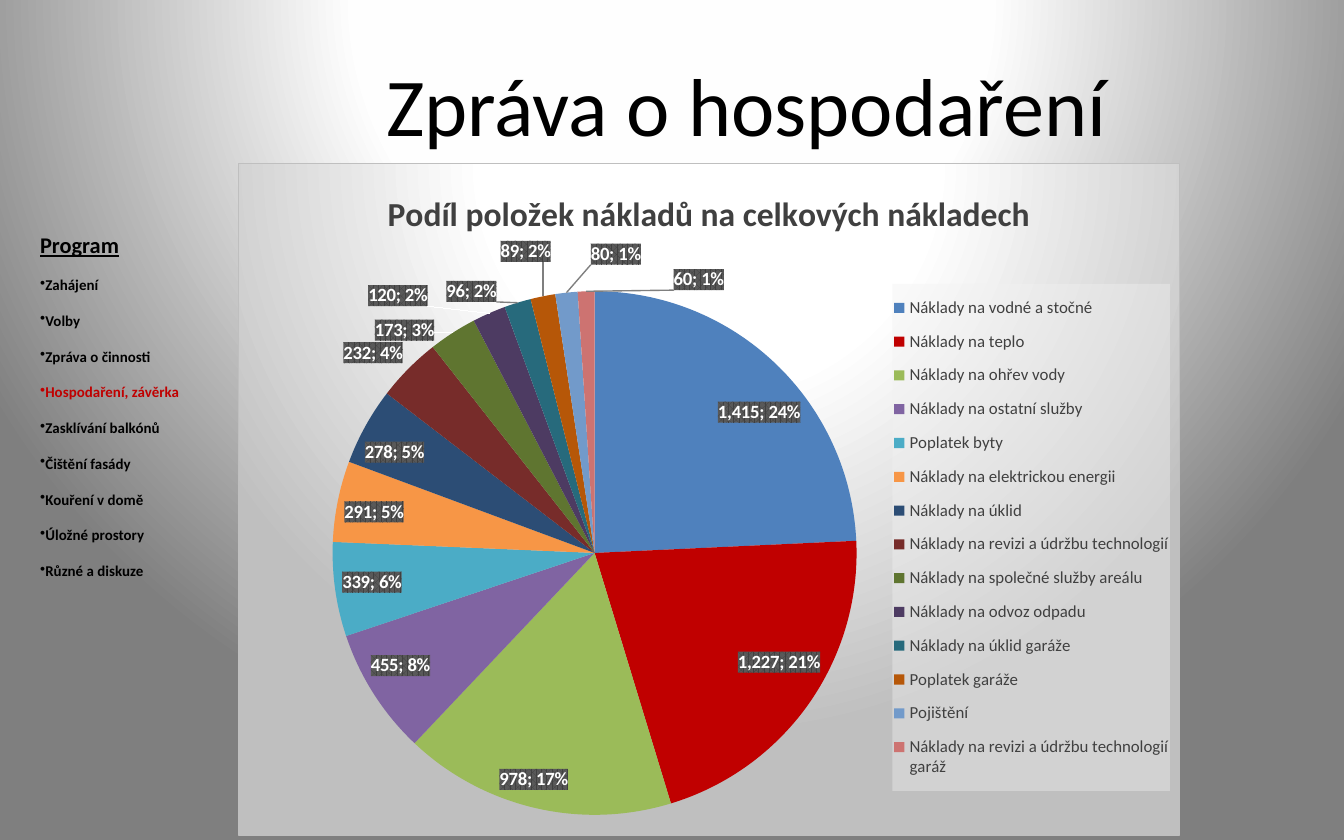
from dataclasses import dataclass
from typing import NamedTuple

from pptx import Presentation
from pptx.chart.data import CategoryChartData
from pptx.dml.color import RGBColor
from pptx.enum.chart import XL_CHART_TYPE, XL_LEGEND_POSITION
from pptx.enum.text import MSO_ANCHOR, PP_ALIGN
from pptx.oxml import parse_xml
from pptx.oxml.ns import nsdecls
from pptx.util import Inches, Pt

SLIDE_WIDTH, SLIDE_HEIGHT = 10, 6.25


@dataclass(frozen=True)
class Theme:
    font: str = "Calibri"
    text: str = "000000"
    accent: str = "C00000"
    chart_text: str = "404040"
    label_text: str = "FFFFFF"
    label_back: str = "595959"
    border: str = "BFBFBF"
    leader: str = "7F7F7F"
    legend_back: str = "F2F2F2"
    title_size: float = 44
    heading_size: float = 12
    item_size: float = 8
    chart_title_size: float = 18
    label_size: float = 10
    legend_size: float = 9


class Area(NamedTuple):
    """Left, top, width and height as shares of the containing object."""
    left: float
    top: float
    width: float
    height: float


class Cost(NamedTuple):
    name: str
    value: int
    color: str
    label_shift: tuple[float, float] | None = None


THEME = Theme()
TITLE_AREA = Area(0.161, 0.04, 0.789, 0.166)
AGENDA_AREA = Area(0.02, 0.235, 0.126, 0.469)
CHART_AREA = Area(0.177, 0.194, 0.701, 0.801)
PIE_AREA = Area(0.1, 0.19, 0.557, 0.78)
LEGEND_AREA = Area(0.695, 0.179, 0.295, 0.755)

AGENDA = ["Zahájení", "Volby", "Zpráva o činnosti", "Hospodaření, závěrka",
          "Zasklívání balkónů", "Čištění fasády", "Kouření v domě",
          "Úložné prostory", "Různé a diskuze"]
CURRENT_ITEM = "Hospodaření, závěrka"

COSTS = [
    Cost("Náklady na vodné a stočné", 1415, "4F81BD"),
    Cost("Náklady na teplo", 1227, "C00000"),
    Cost("Náklady na ohřev vody", 978, "9BBB59"),
    Cost("Náklady na ostatní služby", 455, "8064A2"),
    Cost("Poplatek byty", 339, "4BACC6"),
    Cost("Náklady na elektrickou energii", 291, "F79646"),
    Cost("Náklady na úklid", 278, "2C4D75"),
    Cost("Náklady na revizi a údržbu technologií", 232, "772C2A"),
    Cost("Náklady na společné služby areálu", 173, "5F7530"),
    Cost("Náklady na odvoz odpadu", 120, "4D3B62"),
    Cost("Náklady na úklid garáže", 96, "276A7C", (-0.02, 0.01)),
    Cost("Poplatek garáže", 89, "B65708", (0.01, -0.04)),
    Cost("Pojištění", 80, "729ACA", (0.08, -0.03)),
    Cost("Náklady na revizi a údržbu technologií garáž", 60, "CD7371", (0.12, 0.01)),
]


def place(area: Area) -> tuple:
    return (Inches(area.left * SLIDE_WIDTH), Inches(area.top * SLIDE_HEIGHT),
            Inches(area.width * SLIDE_WIDTH), Inches(area.height * SLIDE_HEIGHT))


def set_font(font, color: str, **values) -> None:
    for name, value in {"name": THEME.font, **values}.items():
        setattr(font, name, value)
    font.color.rgb = RGBColor.from_string(color)


def glow(stops: dict[int, str]) -> str:
    """Radial gradient whose centre lies above the top edge."""
    stop_xml = "".join(f'<a:gs pos="{share * 1000}"><a:srgbClr val="{color}"/></a:gs>'
                       for share, color in stops.items())
    return (f'<a:gradFill {nsdecls("a")} rotWithShape="1"><a:gsLst>{stop_xml}</a:gsLst>'
            '<a:path path="circle"><a:fillToRect l="50000" t="-80000" r="50000" '
            'b="180000"/></a:path></a:gradFill>')


def chart_xml(tag: str, body: str):
    return parse_xml(f'<c:{tag} {nsdecls("c", "a")}>{body}</c:{tag}>')


def set_layout(element, body: str) -> None:
    for old in element.xpath("./c:layout"):
        element.remove(old)
    layout = chart_xml("layout", f"<c:manualLayout>{body}</c:manualLayout>")
    overlay = element.xpath("./c:overlay")
    if overlay:
        overlay[0].addprevious(layout)
    else:
        element.insert(0, layout)


def edge_layout(area: Area, target: str = "") -> str:
    return (f'{target}<c:xMode val="edge"/><c:yMode val="edge"/>'
            f'<c:x val="{area.left}"/><c:y val="{area.top}"/>'
            f'<c:w val="{area.width}"/><c:h val="{area.height}"/>')


def label_format() -> str:
    """Number format stays linked to the data, so percentages keep their own."""
    shown = {"LegendKey": 0, "Val": 1, "CatName": 0, "SerName": 0,
             "Percent": 1, "BubbleSize": 0}
    flags = "".join(f'<c:show{name} val="{flag}"/>' for name, flag in shown.items())
    return ('<c:numFmt formatCode="#,##0" sourceLinked="1"/><c:spPr>'
            f'<a:pattFill prst="pct75"><a:fgClr><a:srgbClr val="{THEME.chart_text}"/></a:fgClr>'
            f'<a:bgClr><a:srgbClr val="{THEME.label_back}"/></a:bgClr></a:pattFill></c:spPr>'
            f'<c:txPr><a:bodyPr/><a:p><a:pPr><a:defRPr sz="{THEME.label_size * 100}" b="1">'
            f'<a:solidFill><a:srgbClr val="{THEME.label_text}"/></a:solidFill>'
            f'<a:latin typeface="{THEME.font}"/></a:defRPr></a:pPr>'
            '<a:endParaRPr lang="cs-CZ"/></a:p></c:txPr>'
            f'<c:dLblPos val="bestFit"/>{flags}<c:separator>; </c:separator>')


def set_labels(series) -> None:
    labels = series.data_labels._element
    moved = "".join(
        f'<c:dLbl><c:idx val="{index}"/><c:layout><c:manualLayout>'
        f'<c:x val="{cost.label_shift[0]}"/><c:y val="{cost.label_shift[1]}"/>'
        f'</c:manualLayout></c:layout>{label_format()}</c:dLbl>'
        for index, cost in enumerate(COSTS) if cost.label_shift)
    leader = ('<c:showLeaderLines val="1"/><c:leaderLines><c:spPr><a:ln w="9525"><a:solidFill>'
              f'<a:srgbClr val="{THEME.leader}"/></a:solidFill></a:ln></c:spPr></c:leaderLines>')
    labels.getparent().replace(labels, chart_xml("dLbls", moved + label_format() + leader))


def add_title(slide) -> None:
    frame = slide.shapes.add_textbox(*place(TITLE_AREA)).text_frame
    frame.word_wrap = True
    frame.vertical_anchor = MSO_ANCHOR.MIDDLE
    paragraph = frame.paragraphs[0]
    paragraph.text = "Zpráva o hospodaření"
    paragraph.alignment = PP_ALIGN.CENTER
    set_font(paragraph.runs[0].font, THEME.text, size=Pt(THEME.title_size))


def add_agenda(slide) -> None:
    frame = slide.shapes.add_textbox(*place(AGENDA_AREA)).text_frame
    frame.word_wrap = True
    heading = frame.paragraphs[0]
    heading.text = "Program"
    heading.line_spacing = 2.0
    set_font(heading.runs[0].font, THEME.text, size=Pt(THEME.heading_size),
             bold=True, underline=True)
    for item in AGENDA:
        paragraph = frame.add_paragraph()
        paragraph.text = item
        paragraph.line_spacing = 2.0
        paragraph._p.get_or_add_pPr().append(
            parse_xml(f'<a:buChar {nsdecls("a")} char="•"/>'))
        set_font(paragraph.runs[0].font, THEME.accent if item == CURRENT_ITEM else THEME.text,
                 size=Pt(THEME.item_size), bold=True)


def add_cost_chart(slide) -> None:
    data = CategoryChartData(number_format="#,##0")
    data.categories = [cost.name for cost in COSTS]
    data.add_series("Series 1", [cost.value for cost in COSTS])
    chart = slide.shapes.add_chart(XL_CHART_TYPE.PIE, *place(CHART_AREA), data).chart
    set_font(chart.font, THEME.text, size=Pt(THEME.label_size))
    chart._chartSpace.chart.addnext(chart_xml(
        "spPr", glow({0: "FFFFFF", 39: "FFFFFF", 100: THEME.border})
        + f'<a:ln w="9525"><a:solidFill><a:srgbClr val="{THEME.border}"/></a:solidFill></a:ln>'))

    chart.has_title = True
    title = chart.chart_title.text_frame.paragraphs[0]
    title.text = "Podíl položek nákladů na celkových nákladech"
    set_font(title.runs[0].font, THEME.chart_text, size=Pt(THEME.chart_title_size), bold=True)

    chart.has_legend = True
    legend = chart.legend
    legend.position = XL_LEGEND_POSITION.RIGHT
    legend.include_in_layout = False
    set_font(legend.font, THEME.chart_text, size=Pt(THEME.legend_size))
    set_layout(legend._element, edge_layout(LEGEND_AREA))
    legend._element.xpath("./c:overlay")[0].addnext(chart_xml(
        "spPr", f'<a:solidFill><a:srgbClr val="{THEME.legend_back}">'
        '<a:alpha val="39000"/></a:srgbClr></a:solidFill>'))

    plot = chart.plots[0]
    plot.vary_by_categories = True
    set_layout(chart._chartSpace.chart.plotArea,
               edge_layout(PIE_AREA, '<c:layoutTarget val="inner"/>'))
    series = plot.series[0]
    for index, cost in enumerate(COSTS):
        fill = series.points[index].format.fill
        fill.solid()
        fill.fore_color.rgb = RGBColor.from_string(cost.color)
    set_labels(series)


def main() -> None:
    presentation = Presentation()
    presentation.slide_width = Inches(SLIDE_WIDTH)
    presentation.slide_height = Inches(SLIDE_HEIGHT)
    slide = presentation.slides.add_slide(presentation.slide_layouts[6])
    slide.background.fill.solid()
    solid = slide.element.xpath(".//p:bgPr/a:solidFill")[0]
    solid.getparent().replace(solid, parse_xml(glow({0: "FFFFFF", 40: "FEFEFE", 100: "7F7F7F"})))
    add_title(slide)
    add_agenda(slide)
    add_cost_chart(slide)
    presentation.save("out.pptx")


if __name__ == "__main__":
    main()
